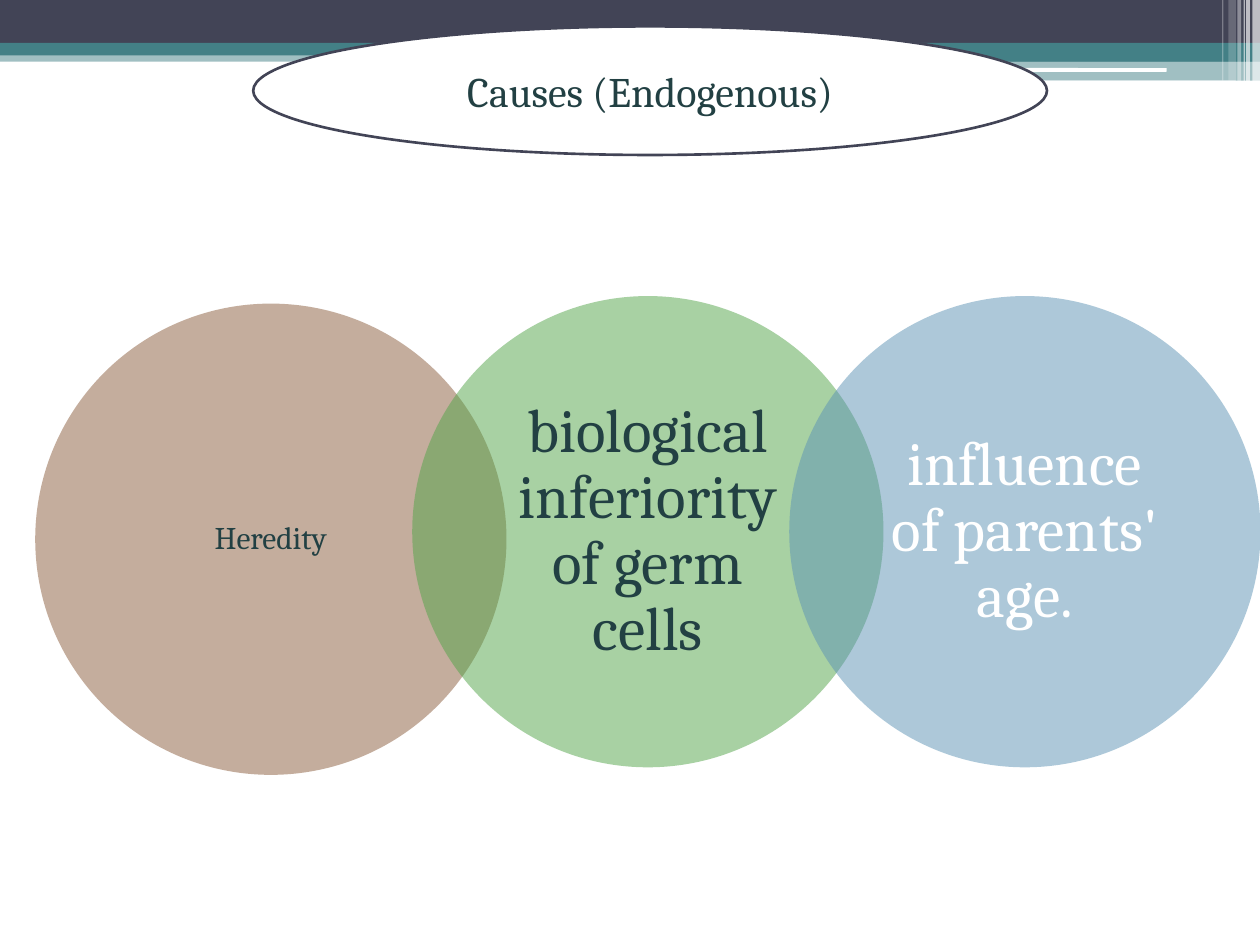
from lxml.etree import SubElement
from pptx import Presentation
from pptx.dml.color import RGBColor
from pptx.enum.shapes import MSO_SHAPE
from pptx.enum.text import MSO_ANCHOR, PP_ALIGN
from pptx.oxml.ns import qn
from pptx.util import Inches, Pt

COLORS = {
    "navy": "424456", "teal": "438086", "white": "FFFFFF", "ink": "224043",
    "brown": "8B5D3D", "green": "52A449", "blue": "5C92B5",
}

# left, top, width, height, color, opacity in percent
BANDS = [
    (0, 0.4, 10, 0.09, "teal", 50),
    (0, 0, 10, 0.34, "navy", 100),
    (0, 0.34, 10, 0.1, "teal", 100),
    (5.92, 0.39, 4.08, 0.1, "teal", 100),
    (5.92, 0.48, 4.08, 0.16, "teal", 50),
]
PILLS = [(5.91, 0.54, 3.35, 0.03), (8.06, 0.64, 1.75, 0.04)]
# left, width, height, opacity in percent
STRIPES = [
    (9.94, 0.06, 0.68, 65), (9.89, 0.03, 0.68, 65), (9.87, 0.01, 0.68, 60),
    (9.82, 0.03, 0.68, 40), (9.75, 0.06, 0.64, 20), (9.7, 0.01, 0.64, 30),
]

TITLE = "Causes (Endogenous)"
# text, top, fill, text color, size, vertical inset
CAUSES = [
    ("Heredity", 2.41, "brown", "ink", 18, 0.03),
    ("biological inferiority of germ cells", 2.35, "green", "ink", 35, 0.05),
    ("influence of parents' age.", 2.35, "blue", "white", 35, 0.05),
]
LEFT, SIZE = 0.28, 3.74
STEP = SIZE * 0.8  # neighbours overlap by a fifth


def color(name):
    return RGBColor.from_string(COLORS[name])


def add_form(slide, kind, box, fill, alpha=100):
    """Add a filled shape without outline or shadow; alpha is its opacity."""
    form = slide.shapes.add_shape(kind, *map(Inches, box))
    form.shadow.inherit = False
    form.line.fill.background()
    form.fill.solid()
    form.fill.fore_color.rgb = color(fill)
    if alpha < 100:
        tint = form.fill._xPr.find(qn("a:solidFill"))[0]
        SubElement(tint, qn("a:alpha"), val=str(alpha * 1000))
    return form


def set_text(form, text, ink, size, inset, space=1.0):
    frame = form.text_frame
    side, edge = map(Inches, inset)
    style = {
        "word_wrap": True, "vertical_anchor": MSO_ANCHOR.MIDDLE,
        "margin_left": side, "margin_right": side,
        "margin_top": edge, "margin_bottom": edge,
    }
    for key, value in style.items():
        setattr(frame, key, value)
    para = frame.paragraphs[0]
    para.text = text
    para.alignment = PP_ALIGN.CENTER
    para.line_spacing = space
    for key, value in {"name": "Cambria", "size": Pt(size)}.items():
        setattr(para.font, key, value)
    para.font.color.rgb = color(ink)


def main():
    deck = Presentation()
    deck.slide_width, deck.slide_height = Inches(10), Inches(7.5)
    slide = deck.slides.add_slide(deck.slide_layouts[6])

    for *box, fill, alpha in BANDS:
        add_form(slide, MSO_SHAPE.RECTANGLE, box, fill, alpha)
    for box in PILLS:
        add_form(slide, MSO_SHAPE.ROUNDED_RECTANGLE, box, "white")
    for left, width, height, alpha in STRIPES:
        box = (left, 0, width, height)
        add_form(slide, MSO_SHAPE.RECTANGLE, box, "white", alpha)

    for i, (text, top, fill, ink, size, edge) in enumerate(CAUSES):
        box = (LEFT + i * STEP, top, SIZE, SIZE)
        disc = add_form(slide, MSO_SHAPE.OVAL, box, fill, 50)
        set_text(disc, text, ink, size, (0.21, edge), 0.9)

    head = add_form(slide, MSO_SHAPE.OVAL, (2.01, 0.21, 6.3, 1.02), "white")
    head.line.color.rgb = color("navy")
    head.line.width = Pt(1.5)
    set_text(head, TITLE, "ink", 24, (0.1, 0.05))

    deck.save("out.pptx")


if __name__ == "__main__":
    main()
